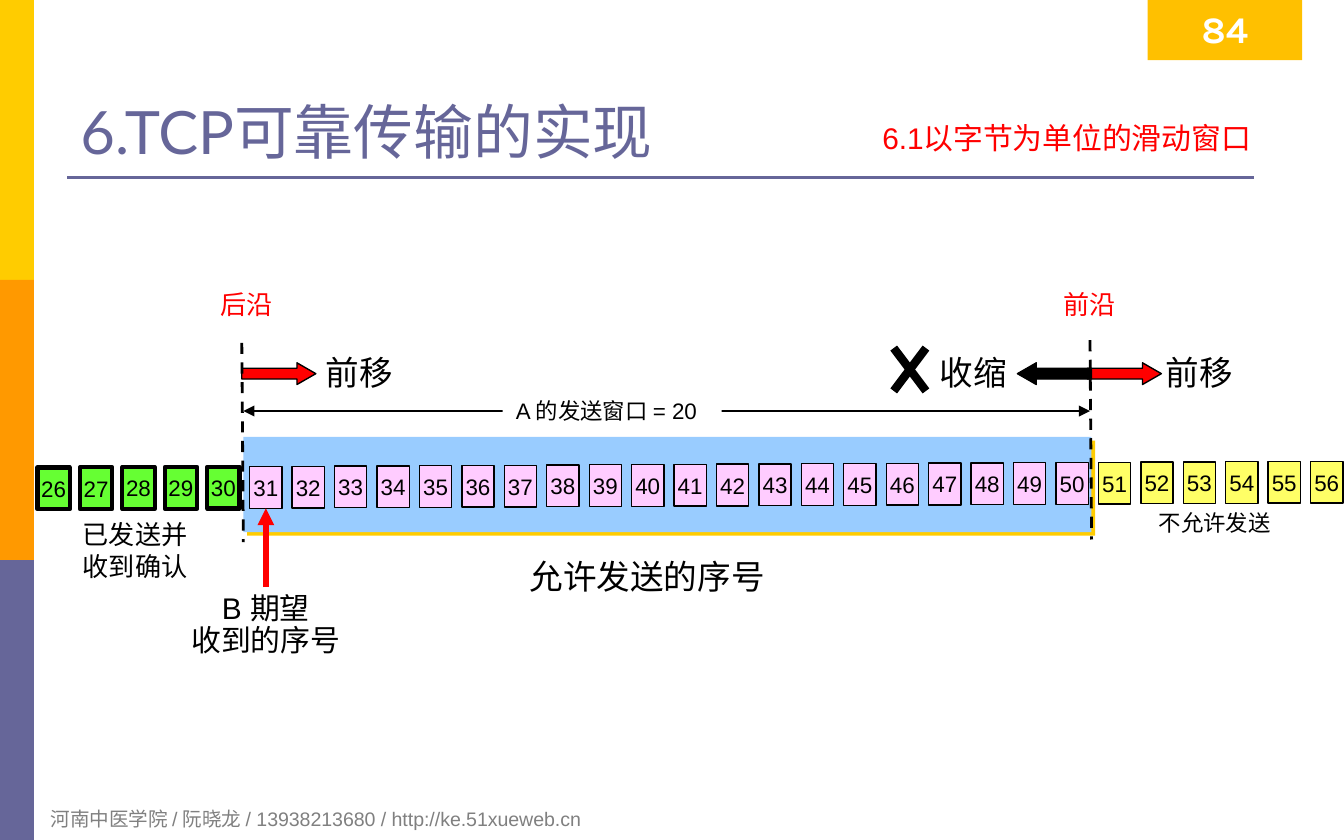
from lxml import etree
from pptx import Presentation
from pptx.dml.color import RGBColor
from pptx.enum import dml, shapes, text
from pptx.oxml import ns
from pptx.util import Cm, Pt

RECT = shapes.MSO_SHAPE.RECTANGLE
ARROW = shapes.MSO_SHAPE.RIGHT_ARROW
MID = text.MSO_ANCHOR.MIDDLE
LEFT, CENTER, RIGHT = text.PP_ALIGN.LEFT, text.PP_ALIGN.CENTER, text.PP_ALIGN.RIGHT


def tint(color, code):
    """Set a colour format from a hex string."""
    color.rgb = RGBColor.from_string(code)


def node(parent, tag, **attrs):
    """Append a drawing element and return it."""
    return etree.SubElement(parent, ns.qn(tag), **attrs)


def area(slide, box, x, y, w, h, fill, edge=None, kind=RECT):
    """Add a filled shape at an offset inside a box."""
    shape = slide.shapes.add_shape(kind, Cm(box[0] + x), Cm(box[1] + y), Cm(w), Cm(h))
    shape.shadow.inherit = False
    shape.fill.solid()
    tint(shape.fill.fore_color, fill)
    if edge:
        tint(shape.line.color, "000000")
        shape.line.width = Pt(edge)
    else:
        shape.line.fill.background()
    return shape


def write(shape, lines, size, color="000000", font="Arial", align=CENTER,
          anchor=text.MSO_ANCHOR.TOP, wrap=False, bold=False, space=None):
    """Fill a shape with one styled run per line."""
    frame = shape.text_frame
    frame.word_wrap = wrap
    frame.vertical_anchor = anchor
    for i, line in enumerate(lines):
        para = frame.add_paragraph() if i else frame.paragraphs[0]
        para.alignment = align
        if space:
            para.line_spacing = space
        run = para.add_run()
        run.text = line
        run.font.name, run.font.size, run.font.bold = font, Pt(size), bold
        tint(run.font.color, color)


def label(slide, box, x, y, w, h, lines, size, fill=None, **style):
    """Add a text box at an offset inside a box."""
    item = slide.shapes.add_textbox(Cm(box[0] + x), Cm(box[1] + y), Cm(w), Cm(h))
    if fill:
        item.fill.solid()
        tint(item.fill.fore_color, fill)
    write(item, lines, size, **style)
    return item


def rule(slide, box, x1, y1, x2, y2, color, width, ends=(), dash=False):
    """Add a straight line between two offsets inside a box."""
    left, top = box[:2]
    line = slide.shapes.add_connector(shapes.MSO_CONNECTOR.STRAIGHT, Cm(left + x1),
                                      Cm(top + y1), Cm(left + x2), Cm(top + y2))
    tint(line.line.color, color)
    line.line.width = Pt(width)
    if dash:
        line.line.dash_style = dml.MSO_LINE.DASH
    for end in ends:
        node(line.line._get_or_add_ln(), "a:" + end, type="triangle")
    node(line._element.spPr, "a:effectLst")
    return line


def side(slide, box):
    """Stack three equal colour bands."""
    step = box[3] / 3
    for i, code in enumerate(("FFCC00", "FF9900", "666699")):
        area(slide, box, 0, i * step, box[2], step, code)


def head(slide, box):
    """Place the title, topic, page number and rule."""
    rule(slide, box, 0, 3.35, 22.43, 3.35, "666699", 1.5)
    label(slide, box, 0, 0.63, box[2], 2.64, ["6.TCP可靠传输的实现"], 32, color="666699",
          font="Lato", align=LEFT, anchor=text.MSO_ANCHOR.BOTTOM, wrap=True)
    page = area(slide, box, 20.42, 0, 2.92, 1.14, "FFC000")
    write(page, ["84"], 20, color="FFFFFF", font="Karla", bold=True, wrap=True)
    label(slide, box, 14.63, 2.13, 8, 1, ["6.1以字节为单位的滑动窗口"], 16,
          color="FF0000", align=RIGHT, wrap=True)


def foot(slide, box):
    """Place the contact line."""
    label(slide, box, 0, 0, box[2], box[3],
          ["河南中医学院 / 阮晓龙 / 13938213680 / http://ke.51xueweb.cn"], 10.5,
          color="808080", align=LEFT, wrap=True)


def moves(slide, box):
    """Show how each edge of the window may move."""
    label(slide, box, 21.06, 1.2, 1.8, 1.02, ["前移"], 18, fill="FFFFFF")
    for x, code, back in ((19.84, "FF0000", 0), (18.52, "000000", 1), (3.86, "FF0000", 0)):
        arrow = area(slide, box, x, 1.53, 1.4, 0.41, code, 0.75, ARROW)
        arrow.adjustments[1] = 0.87
        if back:
            arrow._element.spPr.xfrm.set("flipH", "1")


def span(slide, box):
    """Show the window with its size and side notes."""
    label(slide, box, 20.93, 4.17, 2.64, 0.76, ["不允许发送"], 12, fill="FFFFFF")
    label(slide, box, 0.59, 4.35, 2.51, 1.45, ["已发送并", "收到确认"], 14, fill="FFFFFF")
    rule(slide, box, 3.89, 2.44, 19.89, 2.44, "000000", 0.75, ("headEnd", "tailEnd"))
    label(slide, box, 8.79, 2.06, 4.14, 0.76, ["A 的发送窗口 = 20"], 12,
          fill="FFFFFF", align=LEFT)
    label(slide, box, 9.02, 5.06, 5, 1.02, ["允许发送的序号"], 18, fill="FFFFFF")
    pane = area(slide, box, 3.89, 2.93, 16.03, 1.8, "99CCFF")
    glow = node(pane._element.spPr.find(ns.qn("a:effectLst")), "a:outerShdw",
                dist=str(Pt(2.8)), dir="2700000", algn="ctr", rotWithShape="0")
    node(glow, "a:srgbClr", val="FFCC00")


def cells(slide, box):
    """Draw the numbered bytes and return them by number."""
    made = {}
    for i, num in enumerate(range(26, 57)):
        fill, edge = (("66FF33", 2.25) if num < 31 else
                      ("FFCCFF", 0.75) if num < 51 else ("FFFF66", 0.75))
        made[num] = area(slide, box, i * 0.802, 3.51 - i * 0.004, 0.61, 0.79, fill, edge)
        write(made[num], [str(num)], 12, anchor=MID)
    return made


def marks(slide, box, next_cell):
    """Mark the expected byte, both edges and the barred move."""
    want = label(slide, box, 2.64, 5.77, 3.35, 1.5, ["B 期望", "收到的序号"], 16, space=0.9)
    link = rule(slide, box, 4.32, 5.77, 4.29, 4.35, "FF0000", 3, ("tailEnd",))
    link.begin_connect(want, 0)
    link.end_connect(next_cell, 2)
    for x, name, edge, top in ((3.2, "后沿", 3.86, 1.15), (19.13, "前沿", 19.89, 1.1)):
        rule(slide, box, edge, top, edge + 0.03, top + 3.77, "000000", 1.5, dash=True)
        label(slide, box, x, 0, 1.5, 0.86, [name], 14, fill="FFFFFF", color="FF0000")
    for x, name in ((5.18, "前移"), (16.79, "收缩")):
        label(slide, box, x, 1.2, 1.8, 1.02, [name], 18)
    for x1, x2 in ((16.79, 16.18), (16.18, 16.79)):
        rule(slide, box, x1, 1.25, x2, 2.06, "000000", 4.5)


def chart(slide, box):
    """Draw the sliding window from back to front."""
    moves(slide, box)
    span(slide, box)
    made = cells(slide, box)
    marks(slide, box, made[31])


def main():
    """Build and save the slide."""
    deck = Presentation()
    deck.slide_width, deck.slide_height = Cm(25.4), Cm(15.88)
    slide = deck.slides.add_slide(deck.slide_layouts[6])
    side(slide, (0, 0, 0.64, 15.88))
    head(slide, (1.27, 0, 22.86, 3.35))
    foot(slide, (0.71, 15.14, 17.2, 0.71))
    chart(slide, (0.71, 5.33, 24.66, 7.27))
    deck.save("out.pptx")


if __name__ == "__main__":
    main()
